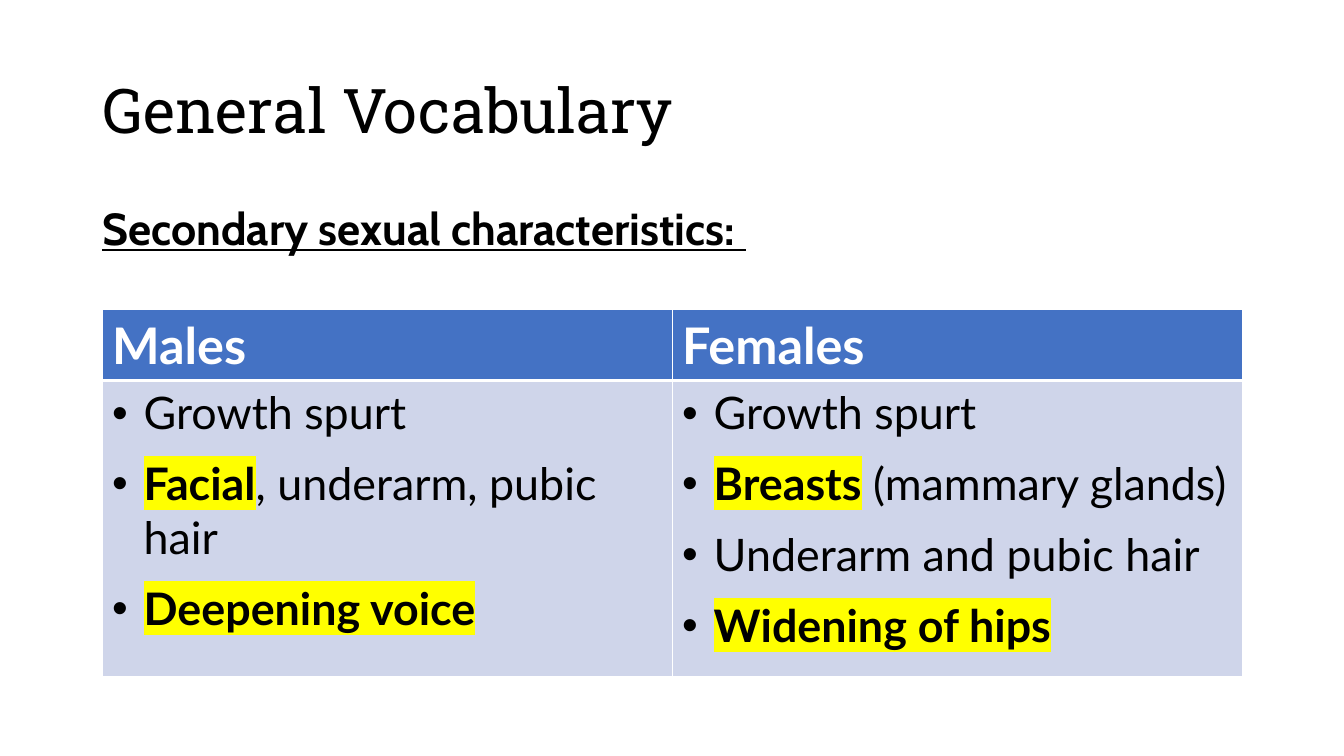
from dataclasses import dataclass

from lxml import etree
from pptx import Presentation
from pptx.dml.color import RGBColor
from pptx.enum.text import MSO_ANCHOR
from pptx.oxml.ns import qn
from pptx.util import Pt

MIDDLE = MSO_ANCHOR.MIDDLE
TOP = MSO_ANCHOR.TOP

BLACK = RGBColor(0x00, 0x00, 0x00)
WHITE = RGBColor(0xFF, 0xFF, 0xFF)
HEADER_BLUE = RGBColor(0x44, 0x72, 0xC4)
BODY_BLUE = RGBColor(0xCF, 0xD5, 0xEA)
YELLOW = RGBColor(0xFF, 0xFF, 0x00)

COLUMN_WIDTH = 407.2
HEADER_HEIGHT = 48.96
BODY_HEIGHT = 211.68
BULLET_INDENT = 22.5
THIN, THICK = 1, 3


@dataclass
class Heading:
    text: str
    left: float
    top: float
    width: float
    height: float
    font: str
    size: float
    anchor: MSO_ANCHOR
    space_before: float = 0
    emphasis: bool = False


@dataclass
class Trait:
    key: str
    rest: str = ""


@dataclass
class Group:
    name: str
    traits: list[Trait]


HEADINGS = [
    Heading("General Vocabulary", 66, 28.8, 828, 104.4, "Roboto Slab", 44, MIDDLE),
    Heading("Secondary sexual characteristics: ", 66, 144, 833, 72,
            "Cabin", 32, TOP, space_before=10, emphasis=True),
]

GROUPS = [
    Group("Males", [
        Trait("", "Growth spurt"),
        Trait("Facial", ", underarm, pubic hair"),
        Trait("Deepening voice"),
    ]),
    Group("Females", [
        Trait("", "Growth spurt"),
        Trait("Breasts", " (mammary glands)"),
        Trait("", "Underarm and pubic hair"),
        Trait("Widening of hips"),
    ]),
]


def set_font(paragraph, name: str, size: float, color: RGBColor, bold: bool) -> None:
    font = paragraph.font
    font.name = name
    font.size = Pt(size)
    font.bold = bold
    font.color.rgb = color


def add_color(parent, tag: str, color: RGBColor) -> None:
    holder = etree.SubElement(parent, qn(tag))
    etree.SubElement(holder, qn("a:srgbClr"), val=str(color))


def add_heading(slide, heading: Heading) -> None:
    box = slide.shapes.add_textbox(Pt(heading.left), Pt(heading.top),
                                   Pt(heading.width), Pt(heading.height))
    frame = box.text_frame
    frame.word_wrap = True
    frame.vertical_anchor = heading.anchor
    paragraph = frame.paragraphs[0]
    paragraph.text = heading.text
    paragraph.line_spacing = 0.9
    paragraph.space_before = Pt(heading.space_before)
    set_font(paragraph, heading.font, heading.size, BLACK, heading.emphasis)
    paragraph.font.underline = heading.emphasis


def style_cell(cell, fill: RGBColor, top: float, bottom: float) -> None:
    properties = cell._tc.get_or_add_tcPr()
    edges = {"a:lnL": THIN, "a:lnR": THIN, "a:lnT": top, "a:lnB": bottom}
    for tag, width in edges.items():
        edge = etree.SubElement(properties, qn(tag), w=str(Pt(width)))
        add_color(edge, "a:solidFill", WHITE)
    cell.fill.solid()
    cell.fill.fore_color.rgb = fill


def add_trait(paragraph, trait: Trait) -> None:
    paragraph.space_before = Pt(6)
    paragraph.space_after = Pt(6)
    properties = paragraph._p.get_or_add_pPr()
    properties.set("marL", str(Pt(BULLET_INDENT)))
    properties.set("indent", str(-Pt(BULLET_INDENT)))
    etree.SubElement(properties, qn("a:buFont"), typeface="Arial")
    etree.SubElement(properties, qn("a:buChar"), char="•")
    set_font(paragraph, "Lato", 32, BLACK, False)
    if trait.key:
        key = paragraph.add_run()
        key.text = trait.key
        key.font.bold = True
        add_color(key.font._element, "a:highlight", YELLOW)
    if trait.rest:
        paragraph.add_run().text = trait.rest


def add_group(table, column: int, group: Group) -> None:
    table.columns[column].width = Pt(COLUMN_WIDTH)
    header, body = table.cell(0, column), table.cell(1, column)
    style_cell(header, HEADER_BLUE, THIN, THICK)
    style_cell(body, BODY_BLUE, THICK, THIN)
    name = header.text_frame.paragraphs[0]
    name.text = group.name
    set_font(name, "Lato", 36, WHITE, True)
    frame = body.text_frame
    for index, trait in enumerate(group.traits):
        add_trait(frame.add_paragraph() if index else frame.paragraphs[0], trait)


def main() -> None:
    deck = Presentation()
    deck.slide_width, deck.slide_height = Pt(960), Pt(540)
    slide = deck.slides.add_slide(deck.slide_layouts[6])

    # Title and subheading
    for heading in HEADINGS:
        add_heading(slide, heading)

    # Comparison table
    table = slide.shapes.add_table(
        2, len(GROUPS), Pt(72.9), Pt(221.3),
        Pt(COLUMN_WIDTH * len(GROUPS)), Pt(HEADER_HEIGHT + BODY_HEIGHT)).table
    table.rows[0].height = Pt(HEADER_HEIGHT)
    table.rows[1].height = Pt(BODY_HEIGHT)
    for column, group in enumerate(GROUPS):
        add_group(table, column, group)

    deck.save("out.pptx")


if __name__ == "__main__":
    main()
